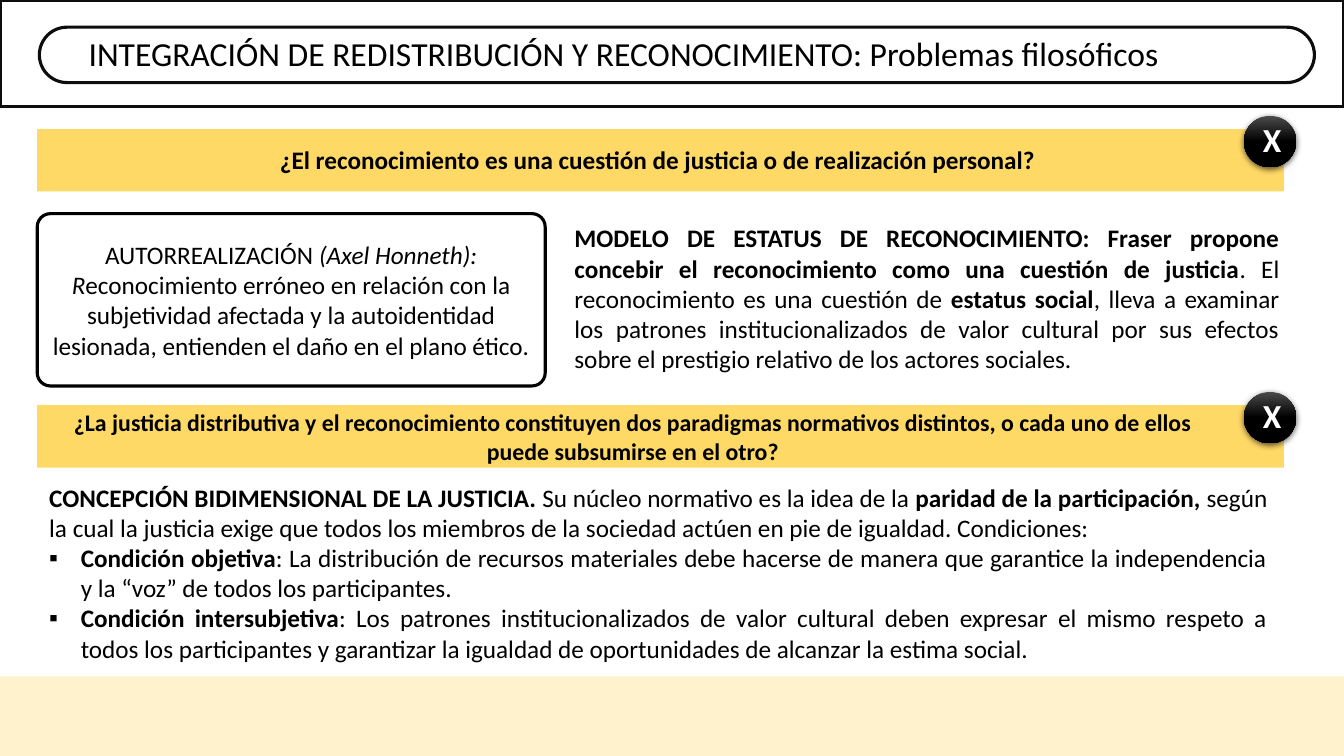
from lxml.etree import SubElement
from pptx import Presentation
from pptx.dml.color import RGBColor
from pptx.enum.shapes import MSO_SHAPE as Kind
from pptx.enum.text import MSO_ANCHOR as Anchor, PP_ALIGN as Align
from pptx.oxml.ns import qn
from pptx.util import Pt

BLACK = RGBColor(0x00, 0x00, 0x00)
INK = RGBColor(0x0D, 0x0D, 0x0D)
GRAY = RGBColor(0x4B, 0x4B, 0x4B)
WHITE = RGBColor(0xFF, 0xFF, 0xFF)
GOLD = RGBColor(0xFF, 0xD9, 0x66)
CREAM = RGBColor(0xFF, 0xF2, 0xCC)

TITLE = "INTEGRACIÓN DE REDISTRIBUCIÓN Y RECONOCIMIENTO: Problemas filosóficos"
ASK_SELF = "¿El reconocimiento es una cuestión de justicia o de realización personal?"
ASK_NORM = ("¿La justicia distributiva y el reconocimiento constituyen dos paradigmas "
            "normativos distintos, o cada uno de ellos puede subsumirse en el otro?")
SELF = [
    [("AUTORREALIZACIÓN ", ""), ("(Axel Honneth):", "i")],
    [("R", "i"), ("econocimiento erróneo en relación con la subjetividad afectada y la "
                  "autoidentidad lesionada, entienden el daño en el plano ético.", "")],
]
STATUS = [[
    ("MODELO DE ESTATUS DE RECONOCIMIENTO: Fraser propone concebir el "
     "reconocimiento como una cuestión de justicia", "b"),
    (". El reconocimiento es una cuestión de ", ""),
    ("estatus social", "b"),
    (", lleva a examinar los patrones institucionalizados de valor cultural por sus "
     "efectos sobre el prestigio relativo de los actores sociales.", ""),
]]
INTRO = [
    ("CONCEPCIÓN BIDIMENSIONAL DE LA JUSTICIA. ", "b"),
    ("Su núcleo normativo es la idea de la ", ""),
    ("paridad de la participación, ", "b"),
    ("según la cual la justicia exige que todos los miembros de la sociedad actúen en "
     "pie de igualdad. Condiciones:", ""),
]
TERMS = [
    [("Condición objetiva", "b"),
     (": La distribución de recursos materiales debe hacerse de manera que garantice la "
      "independencia y la “voz” de todos los participantes.", "")],
    [("Condición intersubjetiva", "b"),
     (": Los patrones institucionalizados de valor cultural deben expresar el mismo "
      "respeto a todos los participantes y garantizar la igualdad de oportunidades de "
      "alcanzar la estima social.", "")],
]


def add_form(slide, kind, box, fill, line=None, adj=None):
    """Add a flat preset shape with an optional outline and corner radius."""
    form = slide.shapes.add_shape(kind, *map(Pt, box))
    form.shadow.inherit = False
    form.fill.solid()
    form.fill.fore_color.rgb = fill
    if line is None:
        form.line.fill.background()
    else:
        form.line.color.rgb = line
        form.line.width = Pt(2.25)
    if adj is not None:
        form.adjustments[0] = adj
    return form


def add_mark(para):
    """Give a paragraph a hanging square bullet."""
    props = para._p.get_or_add_pPr()
    hang = Pt(22.5)
    props.set("marL", str(hang))
    props.set("indent", str(-hang))
    SubElement(props, qn("a:buFont"), typeface="Arial")
    SubElement(props, qn("a:buChar"), char="▪")


def put_text(frame, paras, align=Align.LEFT, size=18, color=BLACK, first=None):
    """Fill a frame with styled runs, with bullets from paragraph first onward."""
    frame.word_wrap = True
    for rank, runs in enumerate(paras):
        para = frame.paragraphs[0] if rank == 0 else frame.add_paragraph()
        para.alignment = align
        if first is not None and rank >= first:
            add_mark(para)
        for text, style in runs:
            run = para.add_run()
            run.text = text
            look = {"name": "Calibri", "size": Pt(size),
                    "bold": style == "b", "italic": style == "i"}
            for key, value in look.items():
                setattr(run.font, key, value)
            run.font.color.rgb = color


def add_text(slide, box, paras, **look):
    """Add a text box holding the given paragraphs."""
    put_text(slide.shapes.add_textbox(*map(Pt, box)).text_frame, paras, **look)


def add_badge(slide, top):
    """Add a glossy black disc with a white X."""
    disc = add_form(slide, Kind.OVAL, (888.5, top, 37.4, 36.7), BLACK)
    disc.fill.gradient()
    disc.fill.gradient_angle = 270
    for stop, (place, color) in zip(disc.fill.gradient_stops, [(0, GRAY), (0.5, BLACK)]):
        stop.position = place
        stop.color.rgb = color
    glow = SubElement(disc._element.spPr.find(qn("a:effectLst")), qn("a:outerShdw"),
                      blurRad=str(Pt(4.5)), dist=str(Pt(1.5)), dir="5400000",
                      algn="ctr", rotWithShape="0")
    tint = SubElement(glow, qn("a:srgbClr"), val=str(BLACK))
    SubElement(tint, qn("a:alpha"), val="63000")
    add_text(slide, (895, top - 1.4, 22.3, 36), [[("X", "b")]], size=24, color=WHITE)


def add_ask(slide, top, box, text, size):
    """Add a gold question bar with its badge."""
    add_form(slide, Kind.RECTANGLE, (26.6, top, 890.6, 44.6), GOLD)
    add_badge(slide, top - 9.4)
    add_text(slide, box, [[(text, "b")]], align=Align.CENTER, size=size)


def main():
    """Build the slide and save it."""
    deck = Presentation()
    deck.slide_width, deck.slide_height = Pt(960), Pt(540)
    slide = deck.slides.add_slide(deck.slide_layouts[6])

    add_form(slide, Kind.RECTANGLE, (0, 0, 960, 76.3), WHITE, INK)
    add_form(slide, Kind.ROUNDED_RECTANGLE, (28.1, 19.4, 910.8, 39.6), WHITE, INK, 0.5)
    add_text(slide, (56.2, 20.2, 880, 36), [[(TITLE, "")]], size=24)
    add_form(slide, Kind.RECTANGLE, (0, 483.1, 960, 56.9), CREAM)

    add_ask(slide, 92.2, (58.3, 99.4, 823, 30), ASK_SELF, 18)
    card = add_form(slide, Kind.ROUNDED_RECTANGLE, (26.6, 152.6, 362.9, 123.1),
                    WHITE, BLACK, 0.077)
    card.text_frame.vertical_anchor = Anchor.MIDDLE
    put_text(card.text_frame, SELF, align=Align.CENTER)
    add_text(slide, (403.2, 155.5, 517.7, 116.6), STATUS, align=Align.JUSTIFY)

    add_ask(slide, 289.4, (26.6, 288, 851, 50), ASK_NORM, 17)
    add_text(slide, (28.1, 340.6, 884.2, 140), [INTRO, *TERMS],
             align=Align.JUSTIFY, first=1)

    deck.save("out.pptx")


if __name__ == "__main__":
    main()
